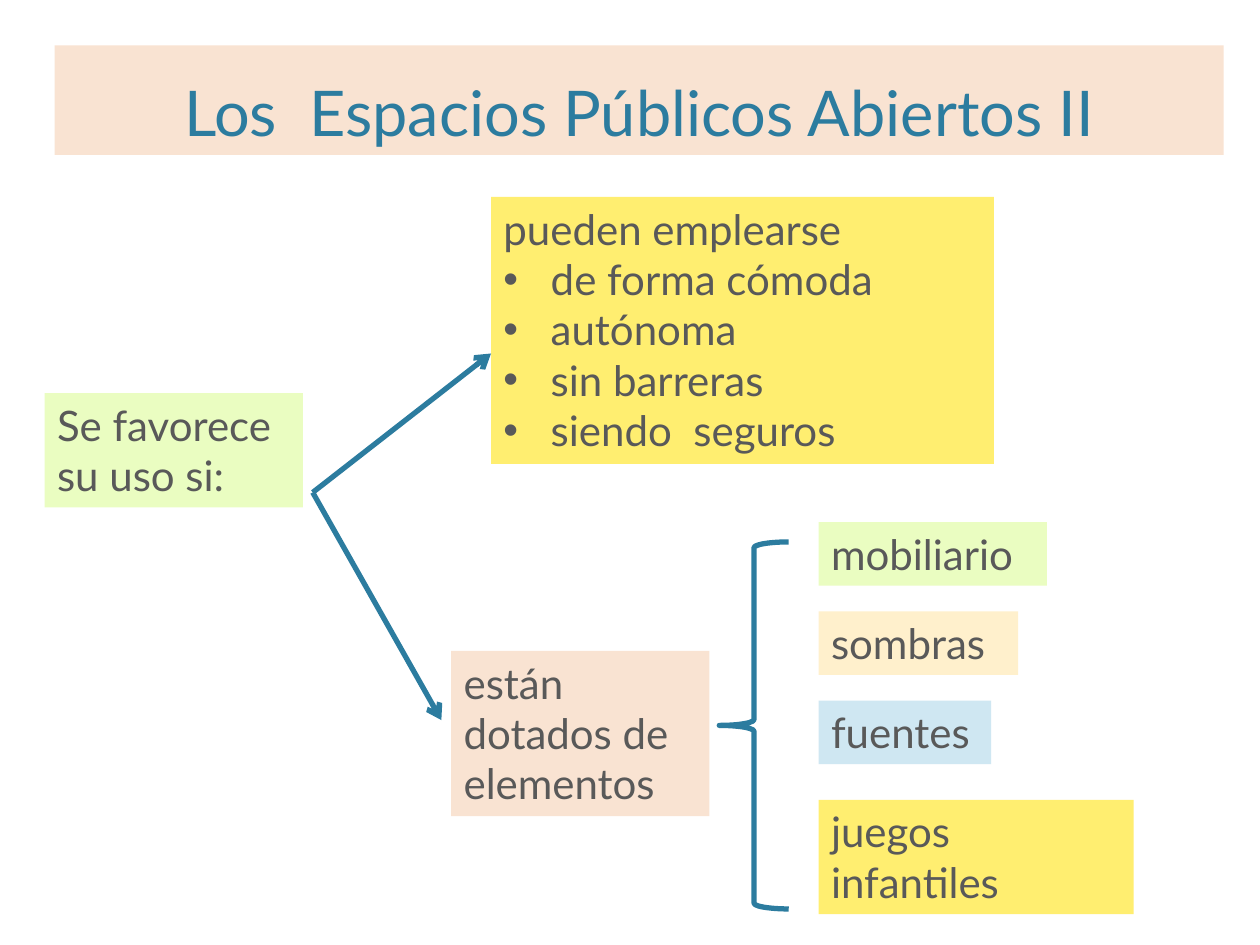
from lxml import etree
from pptx import Presentation
from pptx.dml.color import RGBColor
from pptx.enum.shapes import MSO_CONNECTOR, MSO_SHAPE
from pptx.enum.text import MSO_ANCHOR, PP_ALIGN
from pptx.oxml.ns import qn
from pptx.util import Pt

STRAIGHT = MSO_CONNECTOR.STRAIGHT
LEFT_BRACE = MSO_SHAPE.LEFT_BRACE
TOP, BOTTOM = MSO_ANCHOR.TOP, MSO_ANCHOR.BOTTOM
LEFT, CENTER = PP_ALIGN.LEFT, PP_ALIGN.CENTER

PEACH, LIME, YELLOW = "F9E3D2", "EAFDC1", "FFEE70"
CREAM, SKY = "FFF0CC", "CFE7F2"
TEAL, GRAY = "2C7C9F", "595959"


def rgb(hex_color):
    return RGBColor.from_string(hex_color)


def points(*lengths):
    return [Pt(length) for length in lengths]


class Board:
    """Holds the style and the slide being drawn."""

    font_name = "Lato"
    line_width = 3
    indent = 27

    def __init__(self, slide):
        self.slide = slide

    def box(self, place, fill, lines, size=24, color=GRAY, align=LEFT, anchor=TOP):
        """Filled text box; lines after the first are bulleted."""
        box = self.slide.shapes.add_textbox(*points(*place))
        box.fill.solid()
        box.fill.fore_color.rgb = rgb(fill)
        frame = box.text_frame
        frame.word_wrap = True
        frame.vertical_anchor = anchor
        frame.text = "\n".join(lines)
        for number, paragraph in enumerate(frame.paragraphs):
            paragraph.alignment = align
            font_format = {"name": self.font_name, "size": Pt(size)}
            for attribute, value in font_format.items():
                setattr(paragraph.runs[0].font, attribute, value)
            paragraph.runs[0].font.color.rgb = rgb(color)
            if number:
                self.bullet(paragraph)

    def bullet(self, paragraph):
        properties = paragraph._p.get_or_add_pPr()
        properties.set("marL", str(Pt(self.indent)))
        properties.set("indent", str(-Pt(self.indent)))
        etree.SubElement(properties, qn("a:buFont")).set("typeface", "Arial")
        etree.SubElement(properties, qn("a:buChar")).set("char", "•")

    def stroke(self, line):
        line.color.rgb = rgb(TEAL)
        line.width = Pt(self.line_width)

    def brace(self, place):
        brace = self.slide.shapes.add_shape(LEFT_BRACE, *points(*place))
        brace.shadow.inherit = False
        brace.fill.background()
        self.stroke(brace.line)

    def arrow(self, start, end):
        arrow = self.slide.shapes.add_connector(STRAIGHT, *points(*start, *end))
        self.stroke(arrow.line)
        properties = arrow._element.spPr
        etree.SubElement(properties.find(qn("a:ln")), qn("a:tailEnd")).set("type", "arrow")
        etree.SubElement(properties, qn("a:effectLst"))


def main():
    presentation = Presentation()
    presentation.slide_width, presentation.slide_height = points(720, 540)
    board = Board(presentation.slides.add_slide(presentation.slide_layouts[6]))

    board.box((31.2, 26, 668, 62.6), PEACH, ["Los  Espacios Públicos Abiertos II"],
              size=36, color=TEAL, align=CENTER, anchor=BOTTOM)
    board.box((25.5, 224.6, 147.6, 65.4), LIME, ["Se favorece su uso si:"])
    board.box((280.6, 112.5, 287.4, 152.6), YELLOW,
              ["pueden emplearse", "de forma cómoda", "autónoma",
               "sin barreras", "siendo  seguros"])
    board.box((257.8, 372, 147.6, 94.4), PEACH, ["están dotados de elementos"])

    elements_left = 467.8
    for top, width, height, fill, element in (
        (298.3, 130.5, 36.3, LIME, "mobiliario"),
        (349.4, 114, 36.3, CREAM, "sombras"),
        (400.4, 98.6, 36.3, SKY, "fuentes"),
        (457, 180, 65.4, YELLOW, "juegos infantiles"),
    ):
        board.box((elements_left, top, width, height), fill, [element])

    board.brace((411, 309.7, 39.7, 209.7))
    fork = (178.7, 281.4)
    for arrow_end in ((280.6, 202), (252.2, 411.5)):
        board.arrow(fork, arrow_end)

    presentation.save("out.pptx")


if __name__ == "__main__":
    main()
